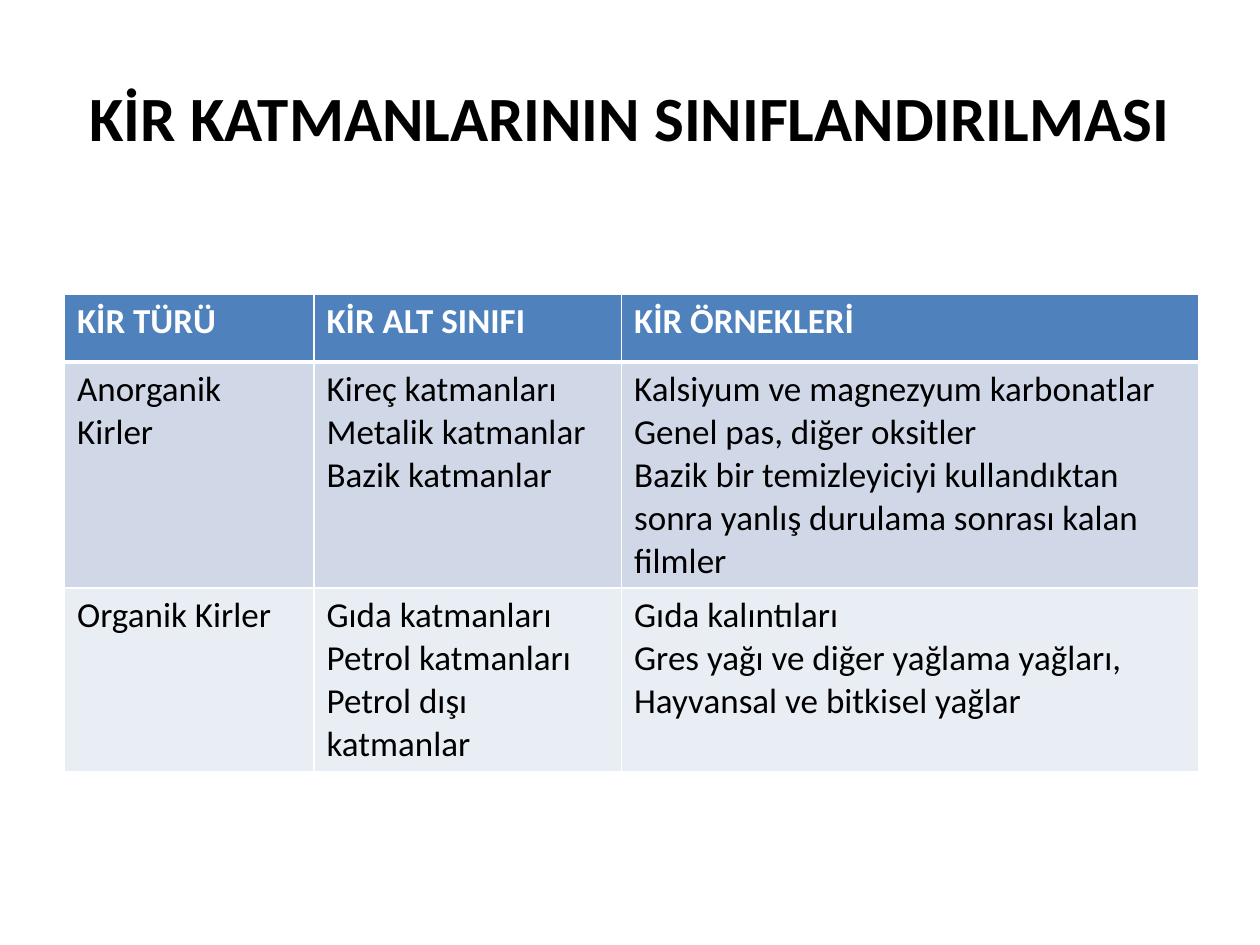
from lxml import etree
from pptx import Presentation
from pptx import util as u
from pptx.dml.color import RGBColor
from pptx.enum import text
from pptx.oxml import ns

COLORS = {"black": "000000", "white": "FFFFFF", "header": "4F81BD",
          "inorganic": "D0D8E8", "organic": "E9EDF4"}
ROWS = [
    ("header", 1.37, ["KİR TÜRÜ", "KİR ALT SINIFI", "KİR ÖRNEKLERİ"]),
    ("inorganic", 4.55, [
        "Anorganik Kirler",
        "Kireç katmanları\nMetalik katmanlar\nBazik katmanlar",
        "Kalsiyum ve magnezyum karbonatlar\nGenel pas, diğer oksitler\n"
        "Bazik bir temizleyiciyi kullandıktan sonra yanlış durulama sonrası kalan filmler"]),
    ("organic", 3.7, [
        "Organik Kirler",
        "Gıda katmanları\nPetrol katmanları\nPetrol dışı katmanlar",
        "Gıda kalıntıları\nGres yağı ve diğer yağlama yağları,\nHayvansal ve bitkisel yağlar"]),
]
COLUMN_WIDTHS = [5.03, 6.2, 11.63]


def style_text(frame, size, color, bold):
    for para in frame.paragraphs:
        for span in para.runs:
            span.font.name = "Calibri"
            span.font.size = u.Pt(size)
            span.font.bold = bold
            span.font.color.rgb = RGBColor.from_string(COLORS[color])


def add_border(cell, side, points):
    properties = cell._tc.get_or_add_tcPr()
    line = etree.SubElement(properties, ns.qn(f"a:ln{side}"), w=str(u.Pt(points)))
    fill = etree.SubElement(line, ns.qn("a:solidFill"))
    etree.SubElement(fill, ns.qn("a:srgbClr"), val=COLORS["white"])


deck = Presentation()
deck.slide_width = u.Cm(25.4)
deck.slide_height = u.Cm(19.05)
page = deck.slides.add_slide(deck.slide_layouts[6])

title = page.shapes.add_textbox(u.Cm(1.27), u.Cm(0.76), u.Cm(22.86), u.Cm(3.18))
title.text_frame.word_wrap = True
title.text_frame.vertical_anchor = text.MSO_ANCHOR.MIDDLE
title.text_frame.text = "KİR KATMANLARININ SINIFLANDIRILMASI"
title.text_frame.paragraphs[0].alignment = text.PP_ALIGN.CENTER
style_text(title.text_frame, 36, "black", True)

table = page.shapes.add_table(
    len(ROWS), len(COLUMN_WIDTHS), u.Cm(1.3), u.Cm(5.93),
    u.Cm(sum(COLUMN_WIDTHS)), u.Cm(sum(height for _, height, _ in ROWS))).table
for column, width in zip(table.columns, COLUMN_WIDTHS):
    column.width = u.Cm(width)

for row_index, (fill_name, height, labels) in enumerate(ROWS):
    table.rows[row_index].height = u.Cm(height)
    is_header = row_index == 0
    for column_index, label in enumerate(labels):
        cell = table.cell(row_index, column_index)
        cell.text_frame.text = label
        style_text(cell.text_frame, 20, "white" if is_header else "black", is_header)
        top = 3 if row_index == 1 else 1
        bottom = 3 if is_header else 1
        for side, points in zip("LRTB", (1, 1, top, bottom)):
            add_border(cell, side, points)
        cell.fill.solid()
        cell.fill.fore_color.rgb = RGBColor.from_string(COLORS[fill_name])

deck.save("out.pptx")
